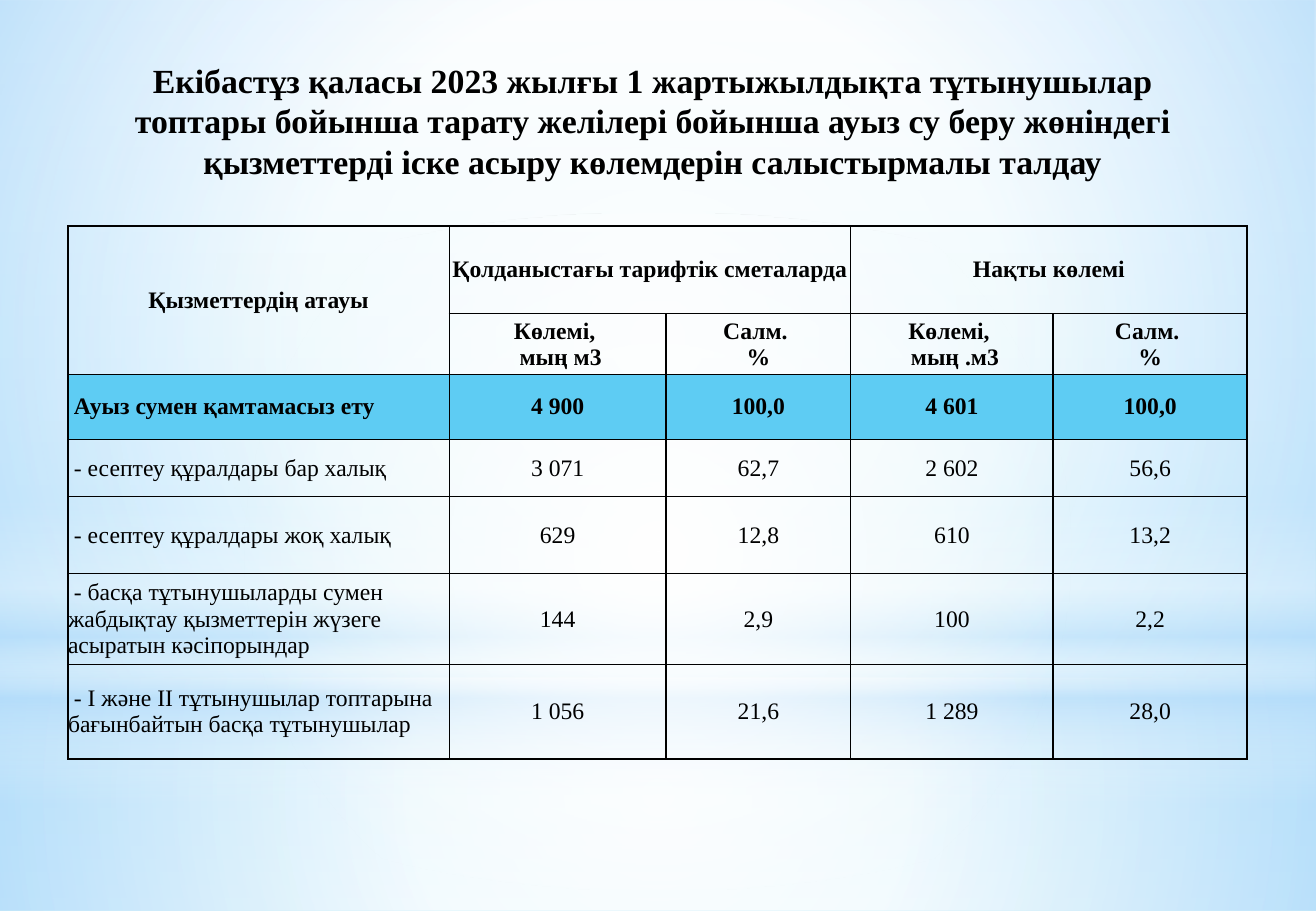
import pptx
import pptx.dml.color
import pptx.enum.shapes
import pptx.enum.text
import pptx.oxml
import pptx.oxml.ns
import pptx.util
from lxml import etree

Pt = pptx.util.Pt
qn = pptx.oxml.ns.qn
MSO_SHAPE = pptx.enum.shapes.MSO_SHAPE
ALIGN = pptx.enum.text.PP_ALIGN
ANCHOR = pptx.enum.text.MSO_ANCHOR
COLORS = {"black": "000000", "white": "FFFFFF", "sky": "B4DCFA", "ice": "F7FCFE",
          "aqua": "B7E8FA", "mist": "CFF0FB", "total": "5ECCF3"}
FONT = "Times New Roman"


def write(tf, text, size=14, bold=False, align=ALIGN.CENTER, color="black"):
    p = tf.paragraphs[0]
    p.text = text
    p.alignment = align
    for r in p.runs:
        r.font.name = FONT
        r.font.size = Pt(size)
        r.font.bold = bold
        r.font.color.rgb = pptx.dml.color.RGBColor.from_string(COLORS[color])
    for br in p._p.findall(qn("a:br")):
        etree.SubElement(br, qn("a:rPr"), sz=str(size * 100))


class Deck:
    def __init__(self, width, height):
        self.prs = pptx.Presentation()
        self.prs.slide_width, self.prs.slide_height = Pt(width), Pt(height)
        self.s = self.prs.slides.add_slide(self.prs.slide_layouts[5])

    def gradient(self, owner, fill, stops, radial=False):
        fill.solid()
        gs = "".join(
            f'<a:gs pos="{pos * 1000}"><a:srgbClr val="{COLORS[color]}">'
            f'<a:alpha val="{alpha * 1000}"/></a:srgbClr></a:gs>'
            for pos, color, alpha in stops)
        shade = ('<a:path path="circle"><a:fillToRect l="50000" t="50000" r="50000" b="50000"/></a:path>'
                 if radial else '<a:lin ang="5400000" scaled="0"/>')
        grad = pptx.oxml.parse_xml(
            f'<a:gradFill {pptx.oxml.ns.nsdecls("a")} rotWithShape="1">'
            f'<a:gsLst>{gs}</a:gsLst>{shade}</a:gradFill>')
        solid = owner.find(".//" + qn("a:solidFill"))
        solid.getparent().replace(solid, grad)

    def background(self, stops):
        self.gradient(self.s.element, self.s.background.fill, stops)

    def glow(self, top, height, stops, radial=True, kind=MSO_SHAPE.RECTANGLE):
        sp = self.s.shapes.add_shape(kind, 0, Pt(top), self.prs.slide_width, Pt(height))
        sp.shadow.inherit = False
        sp.line.fill.background()
        self.gradient(sp._element, sp.fill, stops, radial)

    def title(self, left, top, width, height, text):
        sp = self.s.shapes.title
        sp.left, sp.top, sp.width, sp.height = Pt(left), Pt(top), Pt(width), Pt(height)
        tf = sp.text_frame
        tf.word_wrap = True
        tf.auto_size = pptx.enum.text.MSO_AUTO_SIZE.SHAPE_TO_FIT_TEXT
        tf.vertical_anchor = ANCHOR.TOP
        write(tf, text, size=20, bold=True)
        self.s.shapes._spTree.append(sp._element)

    def border(self, cell, width=1):
        tcPr = cell._tc.get_or_add_tcPr()
        for i, side in enumerate("LRTB"):
            tcPr.insert(i, pptx.oxml.parse_xml(
                f'<a:ln{side} {pptx.oxml.ns.nsdecls("a")} w="{Pt(width)}"><a:solidFill>'
                f'<a:srgbClr val="{COLORS["black"]}"/></a:solidFill></a:ln{side}>'))

    def table(self, left, top, cols, heights, rows, merges, head_rows, total_row):
        tbl = self.s.shapes.add_table(len(rows), len(cols), Pt(left), Pt(top),
                                      Pt(sum(cols)), Pt(sum(heights))).table
        tbl.first_row = tbl.horz_banding = False
        for col, width in zip(tbl.columns, cols):
            col.width = Pt(width)
        for row, height in zip(tbl.rows, heights):
            row.height = Pt(height)
        for i, row in enumerate(rows):
            for j, text in enumerate(row):
                cell = tbl.cell(i, j)
                cell.margin_left = cell.margin_right = cell.margin_top = cell.margin_bottom = 0
                cell.vertical_anchor = ANCHOR.MIDDLE
                if i == total_row:
                    cell.fill.solid()
                    cell.fill.fore_color.rgb = pptx.dml.color.RGBColor.from_string(COLORS["total"])
                else:
                    cell.fill.background()
                self.border(cell)
                label = j == 0 and i >= head_rows
                write(cell.text_frame, text, bold=i <= total_row,
                      align=ALIGN.LEFT if label else ALIGN.CENTER)
        for first, last in merges:
            tbl.cell(*first).merge(tbl.cell(*last))


ROWS = [
    ["Қызметтердің атауы", "Қолданыстағы тарифтік сметаларда", "", "Нақты көлемі", ""],
    ["", "Көлемі, \n мың м3", "Салм. \n%", "Көлемі, \n мың .м3", "Салм. \n%"],
    [" Ауыз сумен қамтамасыз ету", "4 900", "100,0", "4 601", "100,0"],
    [" - есептеу құралдары бар халық", "3 071", "62,7", "2 602", "56,6"],
    [" - есептеу құралдары жоқ халық", "629", "12,8", "610", "13,2"],
    [" - басқа тұтынушыларды сумен жабдықтау қызметтерін жүзеге асыратын кәсіпорындар",
     "144", "2,9", "100", "2,2"],
    [" - I және II тұтынушылар топтарына бағынбайтын басқа тұтынушылар",
     "1 056", "21,6", "1 289", "28,0"],
]


def main():
    deck = Deck(780, 540)
    deck.background([(0, "ice", 100), (74, "aqua", 100), (83, "aqua", 100), (100, "mist", 100)])
    deck.glow(402, 138, [(0, "white", 91), (37, "white", 76), (100, "sky", 79)])
    deck.glow(0, 402, [(0, "white", 89), (48, "white", 62), (100, "sky", 79)])
    deck.glow(296.5, 180, [(0, "white", 0), (29, "white", 30), (45, "sky", 40),
                           (55, "white", 26), (65, "sky", 60), (100, "white", 0)], radial=False)
    deck.glow(126, 402, [(0, "white", 100), (56, "white", 0)], kind=MSO_SHAPE.OVAL)
    deck.table(40.3, 134, [226, 128.5, 109.5, 120, 115], [52, 36, 38.5, 34, 45.5, 54, 56],
               ROWS, [((0, 0), (1, 0)), ((0, 1), (0, 2)), ((0, 3), (0, 4))],
               head_rows=2, total_row=2)
    deck.title(46.8, 31.7, 680.4, 80,
               "Екібастұз қаласы 2023 жылғы 1 жартыжылдықта тұтынушылар топтары бойынша "
               "тарату желілері бойынша ауыз су беру жөніндегі қызметтерді іске асыру "
               "көлемдерін салыстырмалы талдау")
    deck.prs.save("out.pptx")


if __name__ == "__main__":
    main()
